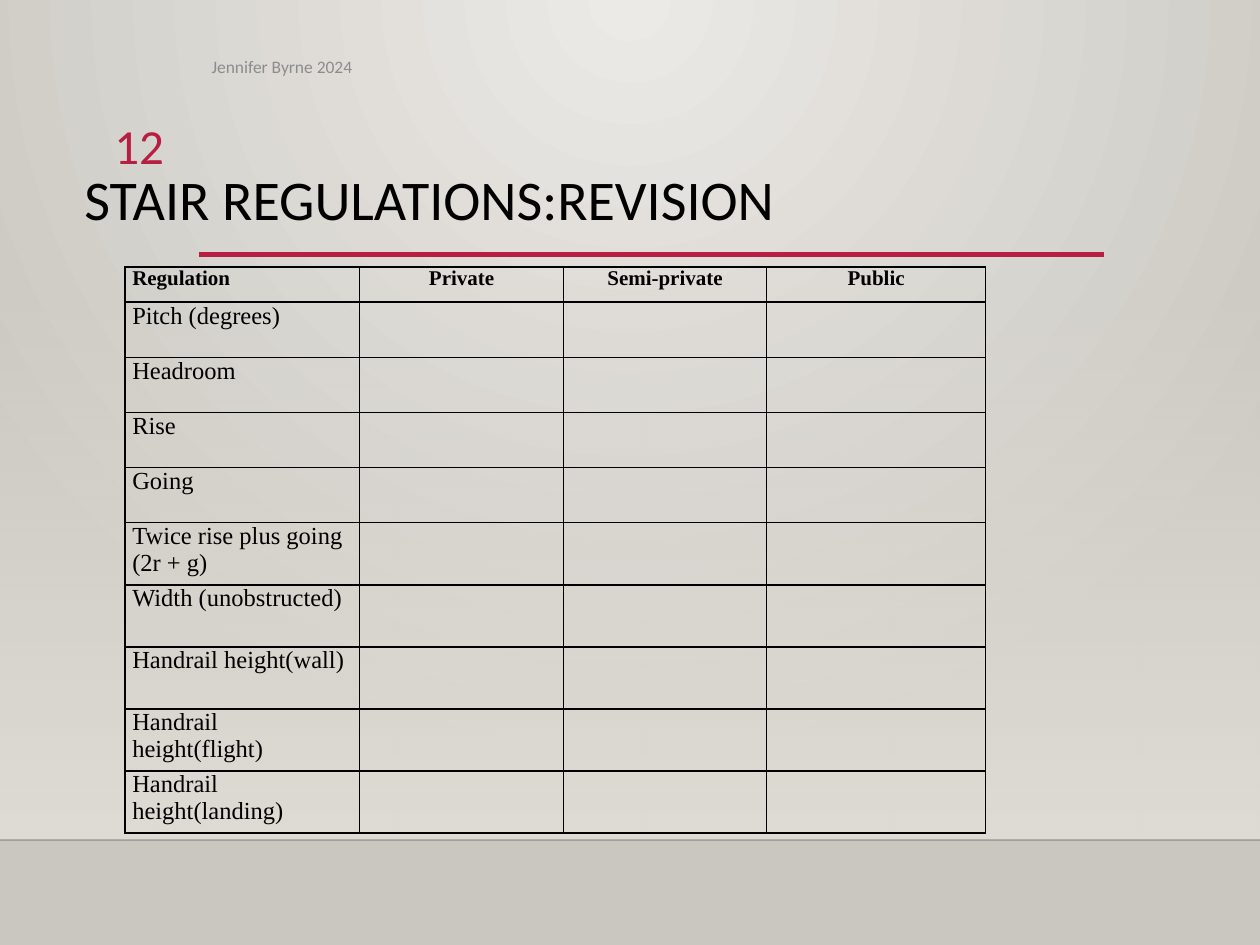
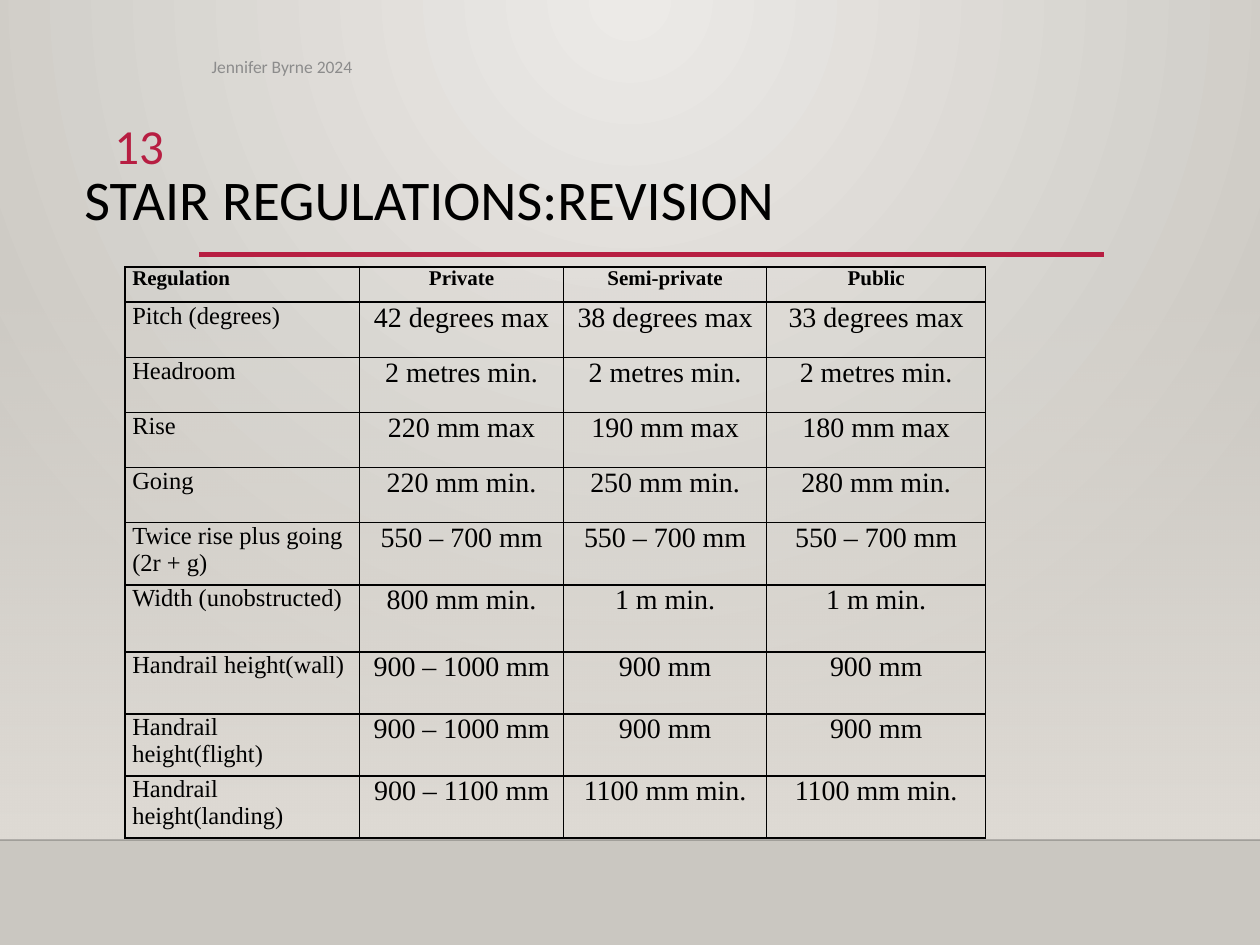
from lxml import etree
from pptx import Presentation
from pptx.dml.color import RGBColor
from pptx.enum.shapes import MSO_CONNECTOR, MSO_SHAPE
from pptx.enum.text import MSO_ANCHOR as Anchor, MSO_AUTO_SIZE as AutoSize, PP_ALIGN as Align
from pptx.oxml.ns import qn
from pptx.util import Pt

# Content
TITLE = "STAIR REGULATIONS:REVISION"
AUTHOR = "Jennifer Byrne 2024"
HEADINGS = ["Regulation", "Private", "Semi-private", "Public"]
REGULATIONS = [
    ("Pitch (degrees)", "42 degrees max", "38 degrees max", "33 degrees max"),
    ("Headroom", "2 metres min.", "2 metres min.", "2 metres min."),
    ("Rise", "220 mm max", "190 mm max", "180 mm max"),
    ("Going", "220 mm min.", "250 mm min.", "280 mm min."),
    ("Twice rise plus going (2r + g)", "550 – 700 mm", "550 – 700 mm", "550 – 700 mm"),
    ("Width (unobstructed)", "800 mm min.", "1 m min.", "1 m min."),
    ("Handrail height(wall)", "900 – 1000 mm", "900 mm", "900 mm"),
    ("Handrail height(flight)", "900 – 1000 mm", "900 mm", "900 mm"),
    ("Handrail height(landing)", "900 – 1100 mm", "1100 mm min.", "1100 mm min."),
]
QUESTIONS = [(row[0], "", "", "") for row in REGULATIONS]
# Slide number, table rows, height of the width row
PAGES = [("12", QUESTIONS, 35.5), ("13", REGULATIONS, 38.3)]

# Shared look
BLACK = RGBColor(0x00, 0x00, 0x00)
FLOOR_LINE = RGBColor(0x00, 0x00, 0x01)
CRIMSON = RGBColor(0xB7, 0x1E, 0x42)
GREY = RGBColor(0x8C, 0x8C, 0x8C)
GLOW = RGBColor(0xEC, 0xEA, 0xE7)
STONE = RGBColor(0xCA, 0xC7, 0xC1)
WALL = RGBColor(0xDF, 0xDB, 0xD5)
SANS, SERIF = "Calibri", "Times New Roman"
PAGE_WIDTH, PAGE_HEIGHT = 720, 540
FLOOR_TOP = 480
TABLE_LEFT, TABLE_TOP = 71.3, 152.7
COLUMN_WIDTHS = [134.2, 116.6, 116, 125.2]
HEADER_HEIGHT, SHORT_ROW, TALL_ROW = 20, 31.5, 35.5
SHORT_ROWS = 4


def write(frame, text, size, color=BLACK, font=SANS, bold=False, align=Align.LEFT,
          anchor=Anchor.TOP):
    frame.word_wrap = True
    frame.vertical_anchor = anchor
    para = frame.paragraphs[0]
    para.alignment = align
    span = para.add_run()
    span.text = text
    span.font.size, span.font.name, span.font.bold = Pt(size), font, bold
    span.font.color.rgb = color


def add_text(page, left, top, width, height, text, size, **style):
    box = page.shapes.add_textbox(Pt(left), Pt(top), Pt(width), Pt(height))
    write(box.text_frame, text, size, **style)


def set_alpha(element, percent):
    alpha = etree.SubElement(element, qn("a:alpha"))
    alpha.set("val", str(percent * 1000))


def set_gradient(fill, first, last):
    fill.gradient()
    for stop, color in zip(fill.gradient_stops, (first, last)):
        stop.color.rgb = color


def add_rule(page, left, right, top, color, width, opacity=100):
    rule = page.shapes.add_connector(MSO_CONNECTOR.STRAIGHT, Pt(left), Pt(top), Pt(right), Pt(top))
    rule.line.color.rgb = color
    rule.line.width = Pt(width)
    properties = rule._element.spPr
    set_alpha(properties.find(".//" + qn("a:srgbClr")), opacity)
    etree.SubElement(properties, qn("a:effectLst"))


def add_backdrop(page):
    # Glow spreading from the top centre
    set_gradient(page.background.fill, GLOW, STONE)
    gradient = page._element.find(".//" + qn("a:gradFill"))
    gradient.remove(gradient.find(qn("a:lin")))
    circle = etree.SubElement(gradient, qn("a:path"), path="circle")
    etree.SubElement(circle, qn("a:fillToRect"), l="43000", t="0", r="43000", b="100000")

    # Wall fading in towards the floor
    wall = page.shapes.add_shape(MSO_SHAPE.RECTANGLE, 0, Pt(158.5), Pt(PAGE_WIDTH),
                                 Pt(FLOOR_TOP - 158.5))
    wall.shadow.inherit = False
    wall.line.fill.background()
    set_gradient(wall.fill, WALL, WALL)
    wall.fill.gradient_angle = 270
    set_alpha(wall._element.spPr.find(".//" + qn("a:srgbClr")), 0)

    add_rule(page, 0, PAGE_WIDTH, FLOOR_TOP, FLOOR_LINE, 1, opacity=20)
    add_rule(page, 113.8, 631, 145.4, CRIMSON, 2.5)


def add_title(page):
    title = page.shapes.title
    title.left, title.top, title.width, title.height = Pt(48.2), Pt(93), Pt(595.5), Pt(39.6)
    frame = title.text_frame
    frame.margin_left = frame.margin_right = frame.margin_bottom = 0
    frame.margin_top = Pt(1)
    frame.auto_size = AutoSize.SHAPE_TO_FIT_TEXT
    write(frame, TITLE, 32)
    # Keep the title in front of the backdrop
    page.shapes._spTree.append(title._element)


def style_cell(cell, margin):
    cell.margin_left = cell.margin_right = Pt(margin)
    cell.margin_top = cell.margin_bottom = 0
    properties = cell._tc.get_or_add_tcPr()
    for side in ("lnL", "lnR", "lnT", "lnB"):
        border = etree.SubElement(properties, qn("a:" + side), w=str(Pt(1)))
        solid = etree.SubElement(border, qn("a:solidFill"))
        etree.SubElement(solid, qn("a:srgbClr"), val=str(BLACK))
    cell.fill.background()


def add_regulations(page, rows, width_row):
    heights = [HEADER_HEIGHT] + [SHORT_ROW] * SHORT_ROWS
    heights += [TALL_ROW, width_row] + [TALL_ROW] * 3
    frame = page.shapes.add_table(len(heights), len(HEADINGS), Pt(TABLE_LEFT), Pt(TABLE_TOP),
                                  Pt(sum(COLUMN_WIDTHS)), Pt(sum(heights)))
    table = frame.table
    table.first_row = table.horz_banding = False
    for column, width in zip(table.columns, COLUMN_WIDTHS):
        column.width = Pt(width)
    for row, height in zip(table.rows, heights):
        row.height = Pt(height)
    for r, texts in enumerate([HEADINGS, *rows]):
        for c, text in enumerate(texts):
            cell = table.cell(r, c)
            header, label = r == 0, c == 0
            style_cell(cell, 4.3 if header or label else 5)
            if text:
                write(cell.text_frame, text, 12 if header else 14 if label else 16,
                      font=SERIF, bold=header, align=Align.LEFT if label else Align.CENTER)


def main():
    deck = Presentation()
    deck.slide_width, deck.slide_height = Pt(PAGE_WIDTH), Pt(PAGE_HEIGHT)
    title_only = deck.slide_layouts[5]
    for number, rows, width_row in PAGES:
        page = deck.slides.add_slide(title_only)
        add_backdrop(page)
        add_title(page)
        add_text(page, 113.8, 26, 317.5, 24.5, AUTHOR, 10, color=GREY, anchor=Anchor.MIDDLE)
        add_text(page, 38.2, 62.6, 62.6, 39.6, number, 28, color=CRIMSON, align=Align.RIGHT)
        add_regulations(page, rows, width_row)
    deck.save("out.pptx")


if __name__ == "__main__":
    main()
